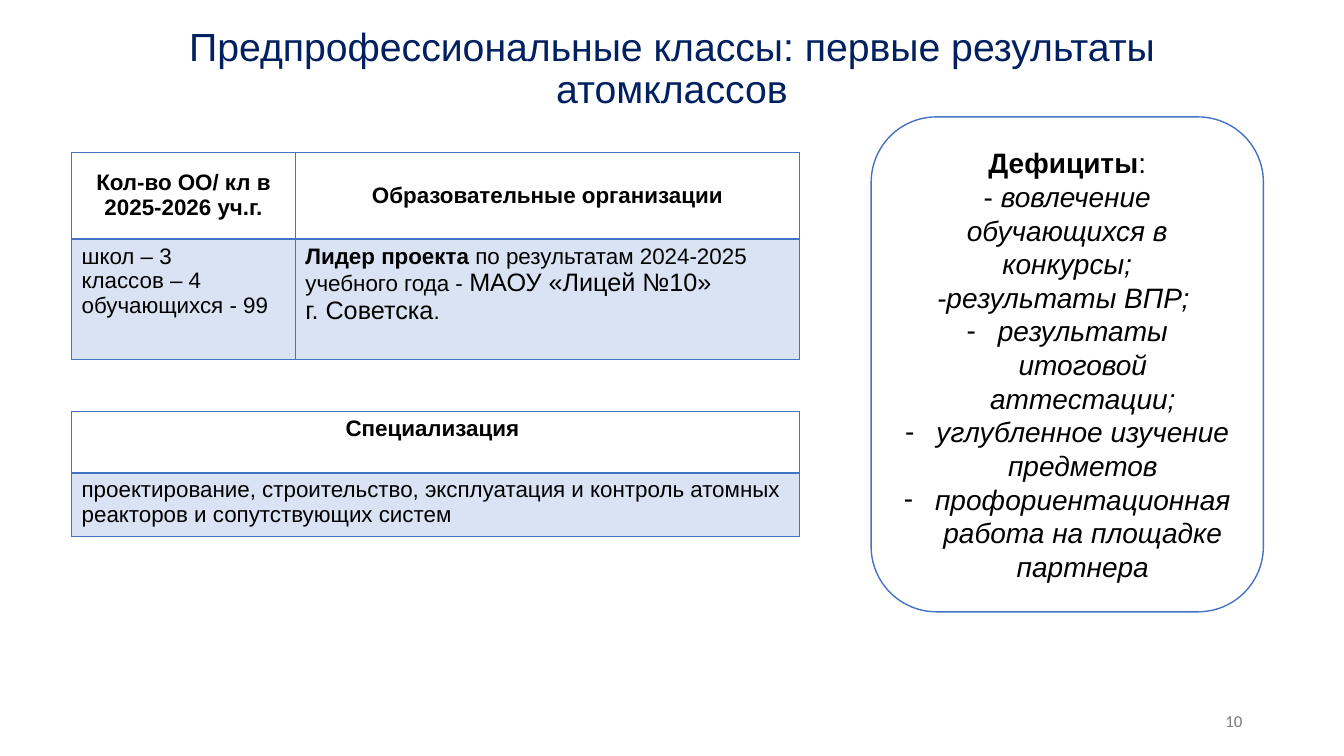
from lxml.etree import SubElement
from pptx import Presentation
from pptx.dml.color import RGBColor
from pptx.enum.shapes import MSO_SHAPE
from pptx.enum.text import MSO_ANCHOR, PP_ALIGN
from pptx.oxml.ns import qn
from pptx.util import Inches, Pt

COLORS = {
    "title": "002060",
    "text": "000000",
    "number": "797979",
    "line": "4472C4",
    "band": "DAE3F3",
    "white": "FFFFFF",
}


def rgb(name):
    return RGBColor.from_string(COLORS[name])


class SlideBuilder:
    """Holds the style and the slide being built."""

    font = "Arial"

    def __init__(self, slide):
        self.slide = slide

    def fill_text(self, frame, paragraphs, size, align=PP_ALIGN.LEFT, color="text", font=None):
        """Each paragraph is a list of (text, style) runs; style may hold b, i and size."""
        frame.word_wrap = True
        for index, runs in enumerate(paragraphs):
            paragraph = frame.paragraphs[0] if index == 0 else frame.add_paragraph()
            paragraph.alignment = align
            for text, style in runs:
                run = paragraph.add_run()
                run.text = text
                run.font.name = font or self.font
                run.font.size = Pt(style.get("size", size))
                run.font.bold = style.get("b", False)
                run.font.italic = style.get("i", False)
                run.font.color.rgb = rgb(color)

    def place(self, shape, left, top, width, height):
        shape.left, shape.top = Inches(left), Inches(top)
        shape.width, shape.height = Inches(width), Inches(height)

    def title(self, text, *box):
        heading = self.slide.shapes.title
        self.place(heading, *box)
        heading.text_frame.vertical_anchor = MSO_ANCHOR.MIDDLE
        self.fill_text(heading.text_frame, [[(text, {})]], 28, PP_ALIGN.CENTER, "title")
        heading.text_frame.paragraphs[0].line_spacing = 0.9

    def page_number(self, text, *box):
        number = self.slide.shapes.add_textbox(*map(Inches, box))
        number.text_frame.vertical_anchor = MSO_ANCHOR.MIDDLE
        self.fill_text(number.text_frame, [[(text, {})]], 12, PP_ALIGN.RIGHT, "number", "Calibri")

    def border(self, cell, side, width):
        properties = cell._tc.get_or_add_tcPr()
        line = SubElement(properties, qn(f"a:ln{side}"), w=str(Pt(width)))
        fill = SubElement(line, qn("a:solidFill"))
        SubElement(fill, qn("a:srgbClr"), val=COLORS["line"])

    def table(self, left, top, columns, heights, headers, body, header_anchor):
        """One header row over one tinted body row."""
        frame = self.slide.shapes.add_table(
            2, len(columns), Inches(left), Inches(top),
            Inches(sum(columns)), Inches(sum(heights)))
        grid = frame.table
        for column, width in zip(grid.columns, columns):
            column.width = Inches(width)
        for row, height in zip(grid.rows, heights):
            row.height = Inches(height)
        for r, contents in enumerate((headers, body)):
            for c, paragraphs in enumerate(contents):
                cell = grid.cell(r, c)
                is_header = r == 0
                cell.vertical_anchor = header_anchor if is_header else MSO_ANCHOR.TOP
                for side in "LRTB":
                    divider = side == ("B" if is_header else "T")
                    self.border(cell, side, 2 if divider else 1)
                cell.fill.solid()
                cell.fill.fore_color.rgb = rgb("white" if is_header else "band")
                self.fill_text(cell.text_frame, paragraphs, 16,
                               PP_ALIGN.CENTER if is_header else PP_ALIGN.LEFT)

    def card(self, paragraphs, first_bullet, *box):
        """Rounded card whose paragraphs from first_bullet on have dash bullets."""
        card = self.slide.shapes.add_shape(MSO_SHAPE.ROUNDED_RECTANGLE, *map(Inches, box))
        card.shadow.inherit = False
        card.fill.solid()
        card.fill.fore_color.rgb = rgb("white")
        card.line.color.rgb = rgb("line")
        card.line.width = Pt(1)
        card.text_frame.vertical_anchor = MSO_ANCHOR.MIDDLE
        self.fill_text(card.text_frame, paragraphs, 20, PP_ALIGN.CENTER)
        for paragraph in card.text_frame.paragraphs[first_bullet:]:
            properties = paragraph._p.get_or_add_pPr()
            properties.set("marL", str(Inches(0.31)))
            properties.set("indent", str(-Inches(0.31)))
            SubElement(properties, qn("a:buFont"), typeface=self.font)
            SubElement(properties, qn("a:buChar"), char="-")


def main():
    deck = Presentation()
    deck.slide_width, deck.slide_height = Inches(13.33), Inches(7.5)
    page = SlideBuilder(deck.slides.add_slide(deck.slide_layouts[5]))
    bold, italic, plain, large = {"b": True}, {"i": True}, {}, {"size": 18}

    # Title and page number
    page.title("Предпрофессиональные классы: первые результаты атомклассов",
               1.31, 0.15, 10.71, 1.09)
    page.page_number("10", 9.42, 6.95, 3, 0.4)

    # Schools and the project leader
    page.table(
        0.71, 1.51, [2.22, 5], [0.86, 1.2],
        [[[("Кол-во ОО/ кл в 2025-2026 уч.г.", bold)]],
         [[("Образовательные организации", bold)]]],
        [[[("школ – 3", plain)], [("классов – 4", plain)], [("обучающихся - 99", plain)]],
         [[("Лидер проекта ", bold),
           ("по результатам 2024-2025 учебного года - ", plain),
           ("МАОУ «Лицей №10»", large)],
          [("г. Советска", large), (".", plain)]]],
        MSO_ANCHOR.MIDDLE)

    # Specialisation
    page.table(
        0.71, 4.08, [7.22], [0.61, 0.6],
        [[[("Специализация ", bold)]]],
        [[[("проектирование, строительство, эксплуатация и контроль атомных "
            "реакторов и сопутствующих систем", plain)]]],
        MSO_ANCHOR.TOP)

    # Shortcomings
    page.card(
        [[("Дефициты", bold), (":", plain)],
         [("- ", plain), ("вовлечение обучающихся в конкурсы;", italic)],
         [("-результаты ВПР; ", italic)],
         [("результаты итоговой аттестации;", italic)],
         [("углубленное изучение предметов", italic)],
         [("профориентационная работа на площадке партнера", italic)]],
        3, 8.64, 1.16, 3.89, 4.91)

    deck.save("out.pptx")


if __name__ == "__main__":
    main()
